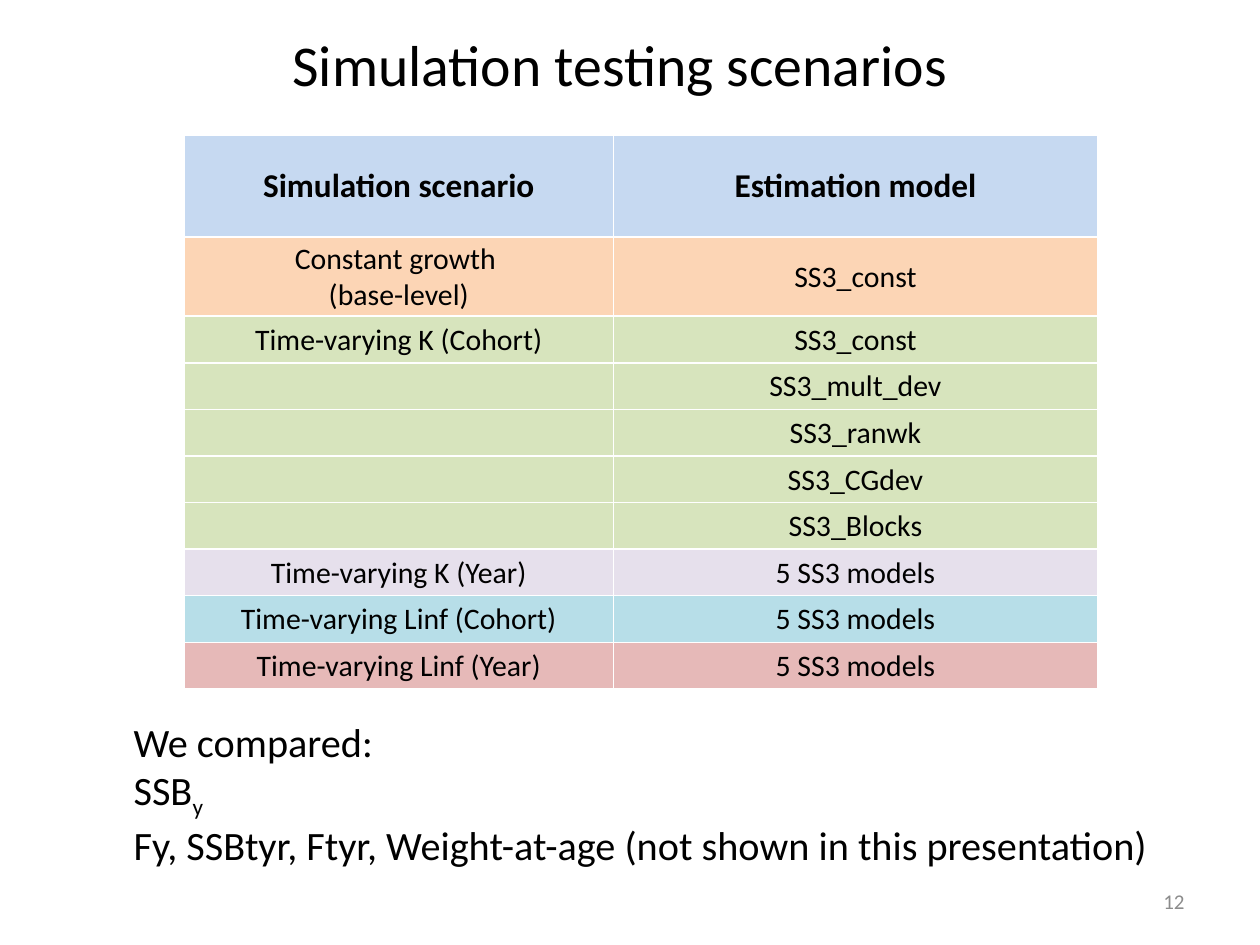
"""Build the simulation testing scenarios slide."""
import pptx
import pptx.dml.color
import pptx.enum.text
import pptx.oxml
import pptx.oxml.ns
import pptx.util

Inches = pptx.util.Inches
ALIGN = pptx.enum.text.PP_ALIGN
ANCHOR = pptx.enum.text.MSO_ANCHOR

TITLE = "Simulation testing scenarios"
HEADER = ("Simulation scenario", "Estimation model", "C6D9F1")
SCENARIOS = [
    ("Constant growth \n(base-level)", "SS3_const", "FCD5B5"),
    ("Time-varying K (Cohort)", "SS3_const", "D7E4BD"),
    ("", "SS3_mult_dev", "D7E4BD"),
    ("", "SS3_ranwk", "D7E4BD"),
    ("", "SS3_CGdev", "D7E4BD"),
    ("", "SS3_Blocks", "D7E4BD"),
    ("Time-varying K (Year)", "5 SS3 models", "E6E0EC"),
    ("Time-varying Linf (Cohort)", "5 SS3 models", "B7DEE8"),
    ("Time-varying Linf (Year)", "5 SS3 models", "E6B9B8"),
]
COMPARED = [
    ["We compared:"],
    ["SSB", ("y", -25000)],
    ["Fy, SSBtyr, Ftyr, Weight-at-age (not shown in this presentation)"],
]
SLIDE_NUMBER = "12"
COLUMN_WIDTHS = (3.41, 3.84)
ROW_HEIGHTS = [0.81, 0.63] + [0.37] * 8


def rgb(color):
    return pptx.dml.color.RGBColor.from_string(color)


def write(frame, text, size, color="000000", bold=False, align=ALIGN.LEFT,
          anchor=ANCHOR.TOP, wrap=True):
    """Fill a text frame from a string or from lists of runs."""
    lines = [[line] for line in text.split("\n")] if isinstance(text, str) else text
    frame.word_wrap = wrap
    frame.vertical_anchor = anchor
    for index, pieces in enumerate(lines):
        paragraph = frame.paragraphs[0] if index == 0 else frame.add_paragraph()
        paragraph.alignment = align
        paragraph.space_before = pptx.util.Pt(0)
        paragraph.font.size = pptx.util.Pt(size)
        for piece in pieces:
            words, baseline = (piece, 0) if isinstance(piece, str) else piece
            run = paragraph.add_run()
            run.text = words
            run.font.name = "Calibri"
            run.font.size = pptx.util.Pt(size)
            run.font.bold = bold
            run.font.color.rgb = rgb(color)
            if baseline:
                run._r.get_or_add_rPr().set("baseline", str(baseline))


def place(shape, left, top, width, height):
    shape.left, shape.top = Inches(left), Inches(top)
    shape.width, shape.height = Inches(width), Inches(height)


def add_borders(cell, color="FFFFFF", width=12700):
    properties = cell._tc.get_or_add_tcPr()
    for side in ("lnL", "lnR", "lnT", "lnB"):
        properties.append(pptx.oxml.parse_xml(
            f'<a:{side} {pptx.oxml.ns.nsdecls("a")} w="{width}"><a:solidFill>'
            f'<a:srgbClr val="{color}"/></a:solidFill></a:{side}>'))


def remove_bullet(paragraph):
    properties = paragraph._p.get_or_add_pPr()
    properties.set("marL", "0")
    properties.set("indent", "0")
    bullet = pptx.oxml.parse_xml(f'<a:buNone {pptx.oxml.ns.nsdecls("a")}/>')
    properties.insert_element_before(bullet, "a:tabLst", "a:defRPr", "a:extLst")


def add_scenarios(slide):
    rows = [HEADER] + SCENARIOS
    table = slide.shapes.add_table(
        len(rows), len(COLUMN_WIDTHS), Inches(1.46), Inches(1.07),
        Inches(sum(COLUMN_WIDTHS)), Inches(sum(ROW_HEIGHTS))).table
    for column, width in zip(table.columns, COLUMN_WIDTHS):
        column.width = Inches(width)
    for r, (*labels, fill) in enumerate(rows):
        table.rows[r].height = Inches(ROW_HEIGHTS[r])
        for c, label in enumerate(labels):
            cell = table.cell(r, c)
            cell.margin_left = cell.margin_right = cell.margin_top = Inches(0.01)
            cell.margin_bottom = 0
            cell.vertical_anchor = ANCHOR.MIDDLE
            add_borders(cell)
            cell.fill.solid()
            cell.fill.fore_color.rgb = rgb(fill)
            if label:
                write(cell.text_frame, label, 19 if r == 0 else 17, bold=r == 0,
                      align=ALIGN.CENTER, anchor=ANCHOR.MIDDLE)


def main():
    deck = pptx.Presentation()
    deck.slide_width, deck.slide_height = Inches(10), Inches(7.5)
    slide = deck.slides.add_slide(deck.slide_layouts[1])

    title = slide.shapes.title
    place(title, 2.22, 0.18, 5.46, 0.66)
    write(title.text_frame, TITLE, 33, wrap=False)

    add_scenarios(slide)

    compared = slide.placeholders[1]
    place(compared, 0.96, 5.64, 8.37, 1.26)
    write(compared.text_frame, COMPARED, 23, wrap=False)
    for paragraph in compared.text_frame.paragraphs:
        remove_bullet(paragraph)

    number = slide.shapes.add_textbox(0, 0, 0, 0)
    place(number, 7.17, 6.95, 2.33, 0.4)
    write(number.text_frame, SLIDE_NUMBER, 12, color="8C8C8C",
          align=ALIGN.RIGHT, anchor=ANCHOR.MIDDLE)

    deck.save("out.pptx")


if __name__ == "__main__":
    main()
